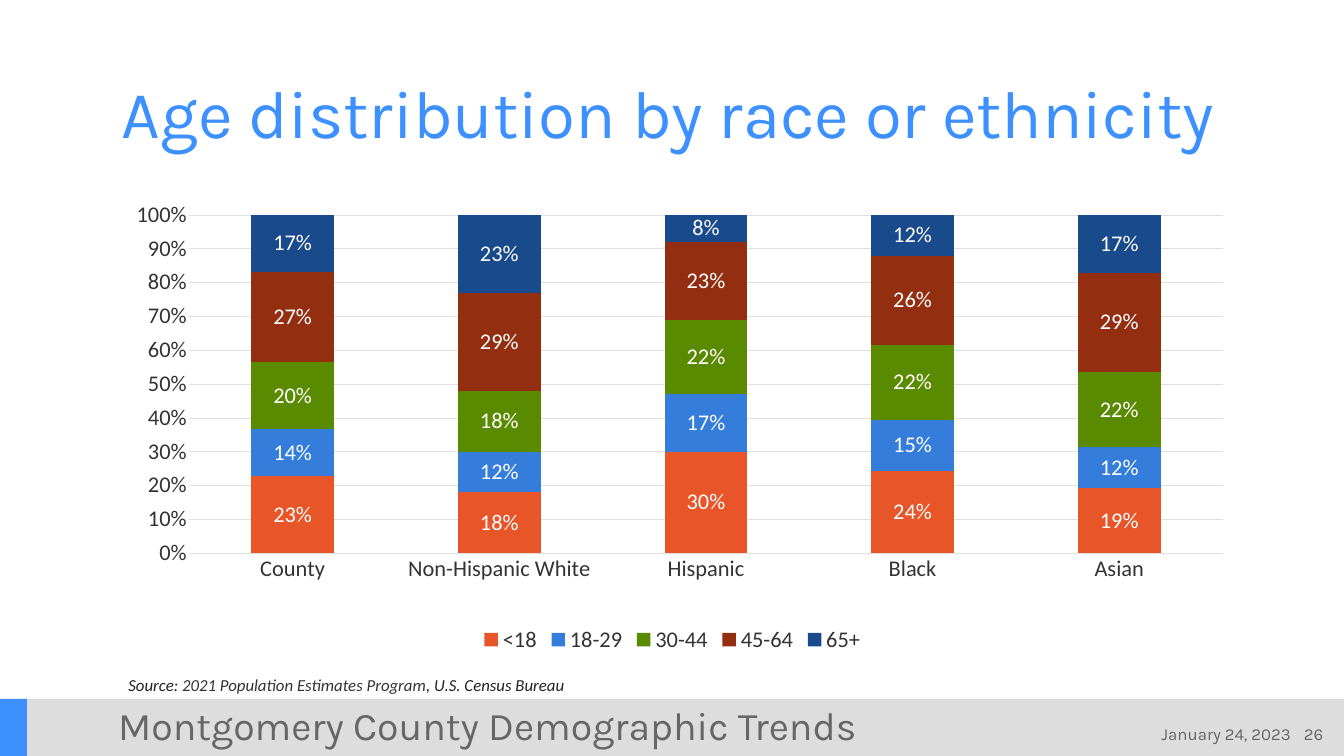
from lxml import etree
from pptx import Presentation
from pptx.chart.data import CategoryChartData
from pptx.dml.color import RGBColor
from pptx.enum.chart import XL_CHART_TYPE, XL_LABEL_POSITION, XL_LEGEND_POSITION, XL_TICK_MARK
from pptx.enum.shapes import MSO_SHAPE
from pptx.enum.text import MSO_ANCHOR, PP_ALIGN
from pptx.oxml.ns import qn
from pptx.util import Inches, Pt

STACKED = XL_CHART_TYPE.COLUMN_STACKED_100
CENTER = XL_LABEL_POSITION.CENTER
BOTTOM = XL_LEGEND_POSITION.BOTTOM
NO_TICK = XL_TICK_MARK.NONE
TOP, MIDDLE, LOW = MSO_ANCHOR.TOP, MSO_ANCHOR.MIDDLE, MSO_ANCHOR.BOTTOM
LEFT, RIGHT = PP_ALIGN.LEFT, PP_ALIGN.RIGHT

# Content
TITLE = "Age distribution by race or ethnicity"
GROUPS = ["County", "Non-Hispanic White", "Hispanic", "Black", "Asian"]
AGES = [
    ("<18", "E75529", (0.23, 0.18, 0.30, 0.24, 0.19)),
    ("18-29", "357DDB", (0.14, 0.12, 0.17, 0.15, 0.12)),
    ("30-44", "5A8A00", (0.20, 0.18, 0.22, 0.22, 0.22)),
    ("45-64", "932F10", (0.27, 0.29, 0.23, 0.26, 0.29)),
    ("65+", "194A8B", (0.17, 0.23, 0.08, 0.12, 0.17)),
]
SOURCE = [("Source: ", "222222"), ("2021 Population Estimates Program", "333333"),
          (", U.S. Census Bureau", "222222")]
# Footer: text, box, size, alignment, anchor
FOOTER = [
    ("Montgomery County Demographic Trends", (1.76, 10.49, 16.4, 0.6), 42, LEFT, MIDDLE),
    ("26", (18.72, 10.82, 0.97, 0.25), 18, RIGHT, LOW),
    ("January 24, 2023", (16.4, 10.82, 2.81, 0.25), 18, RIGHT, LOW),
]
BANDS = [((0, 10.4, 20, 0.85), "DDDDDD"), ((0, 10.4, 0.4, 0.85), "3C90FF")]
PLOT = {"x": 0.062, "y": 0.102, "w": 0.937, "h": 0.686}
BLUE, GREY, TEXT, GRID = "3C90FF", "666666", "333333", "E0E0E0"


def color(value):
    return RGBColor.from_string(value)


def style(font, size, value, name="Calibri", italic=False):
    formats = {"size": Pt(size), "name": name, "bold": False, "italic": italic}
    for key, setting in formats.items():
        setattr(font, key, setting)
    font.color.rgb = color(value)


def set_frame(frame, insets, anchor, wrap=True):
    sides = ("margin_left", "margin_top", "margin_right", "margin_bottom")
    for side, inset in zip(sides, insets):
        setattr(frame, side, Inches(inset))
    frame.vertical_anchor = anchor
    frame.word_wrap = wrap


def fill_line(line):
    line.color.rgb = color(GRID)
    line.width = Pt(0.75)


def set_plot_area(chart):
    area = chart.element.find(".//" + qn("c:plotArea"))
    for old in area.findall(qn("c:layout")):
        area.remove(old)
    layout = etree.Element(qn("c:layout"))
    manual = etree.SubElement(layout, qn("c:manualLayout"))
    settings = {"layoutTarget": "inner", "xMode": "edge", "yMode": "edge", **PLOT}
    for tag, value in settings.items():
        etree.SubElement(manual, qn("c:" + tag)).set("val", str(value))
    area.insert(0, layout)


prs = Presentation()
prs.slide_width, prs.slide_height = Inches(20), Inches(11.25)
slide = prs.slides.add_slide(prs.slide_layouts[5])

# Footer bands and text
for box, fill in BANDS:
    band = slide.shapes.add_shape(MSO_SHAPE.RECTANGLE, *map(Inches, box))
    band.shadow.inherit = False
    band.fill.solid()
    band.fill.fore_color.rgb = color(fill)
    band.line.fill.background()

for text, box, size, align, anchor in FOOTER:
    frame = slide.shapes.add_textbox(*map(Inches, box)).text_frame
    set_frame(frame, (0, 0, 0, 0), anchor)
    paragraph = frame.paragraphs[0]
    paragraph.alignment = align
    run = paragraph.add_run()
    run.text = text
    style(run.font, size, GREY, "Karla")

# Title
title = slide.shapes.title
title.left, title.top, title.width, title.height = map(Inches, (1.81, 0.98, 16.4, 1.27))
set_frame(title.text_frame, (0, 0.05, 0.1, 0), LOW)
heading = title.text_frame.paragraphs[0]
heading.alignment = LEFT
heading.line_spacing = 0.8
run = heading.add_run()
run.text = TITLE
style(run.font, 72, BLUE, "Karla")

# Chart
data = CategoryChartData(number_format="0%")
data.categories = GROUPS
for age, _, shares in AGES:
    data.add_series(age, shares)
chart = slide.shapes.add_chart(STACKED, *map(Inches, (1.8, 2.45, 16.41, 7.34)), data).chart
style(chart.font, 24, TEXT)
chart.has_title = False
chart.has_legend = True
chart.legend.position = BOTTOM
chart.legend.include_in_layout = False
style(chart.legend.font, 24, TEXT)
set_plot_area(chart)

for axis in (chart.category_axis, chart.value_axis):
    axis.major_tick_mark = axis.minor_tick_mark = NO_TICK
    style(axis.tick_labels.font, 24, TEXT)
fill_line(chart.category_axis.format.line)
shares_axis = chart.value_axis
shares_axis.format.line.fill.background()
shares_axis.minimum_scale, shares_axis.maximum_scale, shares_axis.major_unit = 0, 1, 0.1
shares_axis.tick_labels.number_format = "0%"
shares_axis.tick_labels.number_format_is_linked = False
fill_line(shares_axis.major_gridlines.format.line)

plot = chart.plots[0]
plot.gap_width, plot.overlap, plot.vary_by_categories = 150, 100, False
for series, (_, fill, _) in zip(plot.series, AGES):
    series.format.fill.solid()
    series.format.fill.fore_color.rgb = color(fill)
    labels = series.data_labels
    formats = {"show_value": True, "position": CENTER, "number_format": "0%",
               "number_format_is_linked": False}
    for key, setting in formats.items():
        setattr(labels, key, setting)
    style(labels.font, 24, "FFFFFF")

# Source line
frame = slide.shapes.add_textbox(*map(Inches, (1.8, 9.98, 6.84, 0.42))).text_frame
set_frame(frame, (0.11, 0.06, 0.11, 0.06), TOP, wrap=False)
for text, value in SOURCE:
    run = frame.paragraphs[0].add_run()
    run.text = text
    style(run.font, 18, value, italic=True)

prs.save("out.pptx")
